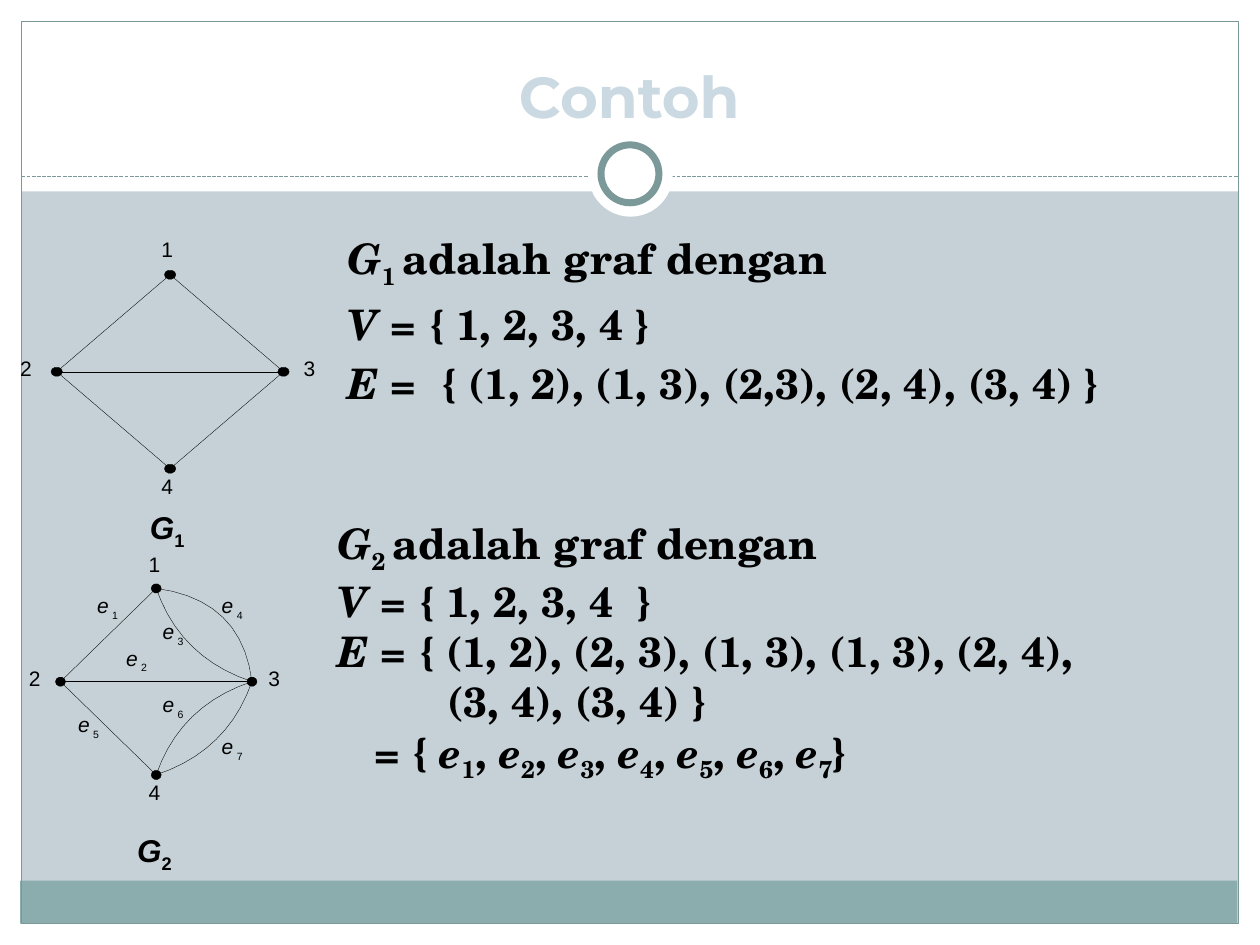
from math import cos, pi, sin
from lxml.etree import SubElement
from pptx import Presentation
from pptx.dml.color import RGBColor
from pptx.enum.dml import MSO_LINE
from pptx.enum.shapes import MSO_CONNECTOR, MSO_SHAPE
from pptx.enum.text import MSO_ANCHOR, PP_ALIGN
from pptx.oxml.ns import qn
from pptx.util import Inches, Pt

presentation = Presentation()
presentation.slide_width, presentation.slide_height = Inches(10), Inches(7.5)
column = presentation.slide_width / 100
row = presentation.slide_height / 75
color = RGBColor.from_string
slide = presentation.slides.add_slide(presentation.slide_layouts[6])
slide.background.fill.solid()
slide.background.fill.fore_color.rgb = color("C5D1D7")


def add_line(shapes, start, end, line_color="000000", width=0.2, dash=None):
    connector = shapes.add_connector(
        MSO_CONNECTOR.STRAIGHT, int(start[0] * column), int(start[1] * row),
        int(end[0] * column), int(end[1] * row))
    connector.line.color.rgb = color(line_color)
    connector.line.width = Pt(width)
    if dash:
        connector.line.dash_style = dash
    SubElement(connector._element.spPr, qn("a:effectLst"))


# In lines, *...* is italic and ~...~ is subscript.
def add_text(shapes, box, lines, size=12, font="Arial", text_color="000000", bold=False,
             inset=True, wrap=True, anchor=MSO_ANCHOR.TOP, align=PP_ALIGN.LEFT,
             space_before=0, indents={}):
    left, top, width, height = box
    frame = shapes.add_textbox(int(left * column), int(top * row),
                               int(width * column), int(height * row)).text_frame
    frame.word_wrap = wrap
    frame.vertical_anchor = anchor
    if not inset:
        frame.margin_left = frame.margin_right = frame.margin_top = frame.margin_bottom = 0
    for index, line in enumerate(lines):
        paragraph = frame.add_paragraph() if index else frame.paragraphs[0]
        paragraph.alignment = align
        paragraph.space_before = Pt(space_before)
        if index in indents:
            paragraph._p.get_or_add_pPr().set("marL", str(int(indents[index] * column)))
        for part_index, part in enumerate(line.split("*")):
            for piece_index, piece in enumerate(part.split("~")):
                if not piece:
                    continue
                run = paragraph.add_run()
                run.text = piece
                run.font.size, run.font.name = Pt(size), font
                run.font.bold, run.font.italic = bold, part_index % 2 == 1
                run.font.color.rgb = color(text_color)
                if piece_index % 2:
                    run.font._element.set("baseline", "-25000")


frame_parts = [
    (MSO_SHAPE.RECTANGLE, (0, 73.3, 100, 1.7), "FFFFFF", 0),
    (MSO_SHAPE.RECTANGLE, (0, 0, 100, 15.2), "FFFFFF", 0),
    (MSO_SHAPE.RECTANGLE, (0, 0, 1.7, 75), "FFFFFF", 0),
    (MSO_SHAPE.RECTANGLE, (98.3, 0, 1.7, 75), "FFFFFF", 0),
    (MSO_SHAPE.RECTANGLE, (1.6, 69.9, 96.6, 3.4), "8CADAE", 0),
    (MSO_SHAPE.RECTANGLE, (1.7, 1.7, 96.6, 71.6), None, 0.75),
    ("divider", None, None, 0),
    (MSO_SHAPE.OVAL, (46.7, 10.5, 6.7, 6.7), "FFFFFF", 0),
    (MSO_SHAPE.OVAL, (47.7, 11.5, 4.6, 4.6), "FFFFFF", 4),
]
for kind, box, fill, line_width in frame_parts:
    if kind == "divider":
        add_line(slide.shapes, (1.7, 14), (98.3, 14), "7C999A", 0.75, MSO_LINE.SQUARE_DOT)
        continue
    left, top, width, height = box
    shape = slide.shapes.add_shape(kind, int(left * column), int(top * row),
                                   int(width * column), int(height * row))
    shape.shadow.inherit = False
    if fill:
        shape.fill.solid()
        shape.fill.fore_color.rgb = color(fill)
    else:
        shape.fill.background()
    if line_width:
        shape.line.color.rgb = color("7C999A")
        shape.line.width = Pt(line_width)
    else:
        shape.line.fill.background()

add_text(slide.shapes, (3.3, 2.5, 93.3, 8.3), ["Contoh"], size=33, font="Montserrat",
         text_color="CBDAE2", bold=True, anchor=MSO_ANCHOR.BOTTOM, align=PP_ALIGN.CENTER)
add_text(slide.shapes, (26.6, 18, 71.1, 22.7),
         ["*G*~1 ~adalah graf dengan", "*V* = { 1, 2, 3, 4 }",
          "*E* =  { (1, 2), (1, 3), (2,3), (2, 4), (3, 4) }"],
         size=24, font="TeX Gyre Schola", bold=True, space_before=4.8)
edge_names = ", ".join(f"*e*~{number}~" for number in range(1, 8))
add_text(slide.shapes, (25.8, 40.6, 69.5, 31.2),
         ["*G*~2 ~adalah graf dengan", "*V* = { 1, 2, 3, 4  }",
          "*E* = { (1, 2), (2, 3), (1, 3), (1, 3), (2, 4),", "(3, 4), (3, 4) }",
          "= { " + edge_names + "}"],
         size=24, font="TeX Gyre Schola", bold=True, indents={3: 8.7, 4: 2.9})

graphs = [
    {"nodes": [(13.5, 21.8), (4.5, 29.5), (22.5, 29.5), (13.5, 37.2)],
     "radius": 0.45,
     "edges": [(1, 2), (2, 4), (1, 3), (3, 4), (2, 3)],
     "curves": [],
     "node_labels": [(12.8, 18.8), (1.6, 28.2), (24.1, 28.2), (12.8, 37.6)],
     "edge_labels": [],
     "name": ("*G*~1~", 10.9, 39.8)},
    {"nodes": [(12.4, 46.7), (4.8, 54.1), (20, 54.1), (12.4, 61.5)],
     "radius": 0.4,
     "edges": [(2, 4), (1, 2), (2, 3)],
     "curves": [(1, 3, (14.3, 52.2)), (3, 4, (14.3, 56)),
                (1, 3, (19.2, 47.6)), (3, 4, (18.1, 59.6))],
     "node_labels": [(11.8, 43.8), (2.3, 52.8), (21.3, 52.8), (11.8, 61.9)],
     "edge_labels": [(7.7, 47), (10, 51.2), (12.9, 49.1), (17.6, 47),
                     (6.2, 56.5), (12.9, 54.9), (17.6, 58.2)],
     "name": ("*G*~2~", 9.9, 65.5)},
]
for graph in graphs:
    shapes = slide.shapes.add_group_shape().shapes
    nodes = graph["nodes"]
    outlines = [([(x + graph["radius"] * cos(step * pi / 5),
                   y + 0.37 * sin(step * pi / 5)) for step in range(10)], True)
                for x, y in nodes]
    for first, last, bend in graph["curves"]:
        ends = zip(nodes[first - 1], bend, nodes[last - 1])
        xs, ys = [[(1 - t) ** 2 * a + 2 * t * (1 - t) * b + t ** 2 * c
                   for t in (step / 10 for step in range(11))] for a, b, c in ends]
        outlines.append((list(zip(xs, ys)), False))
    for points, closed in outlines:
        corners = [(int(x * column), int(y * row)) for x, y in points]
        builder = shapes.build_freeform(*corners[0])
        builder.add_line_segments(corners[1:], close=closed)
        shape = builder.convert_to_shape()
        shape.shadow.inherit = False
        if closed:
            shape.fill.solid()
            shape.fill.fore_color.rgb = color("000000")
        else:
            shape.fill.background()
        shape.line.color.rgb = color("000000")
        shape.line.width = Pt(0.2)
    for first, last in graph["edges"]:
        add_line(shapes, nodes[first - 1], nodes[last - 1])
    for number, (x, y) in enumerate(graph["node_labels"], 1):
        add_text(shapes, (x, y, 2.5, 3.1), [str(number)], inset=False)
    for number, (x, y) in enumerate(graph["edge_labels"], 1):
        add_text(shapes, (x, y, 2.1, 3.1), ["*e*"], inset=False)
        add_text(shapes, (x + 1.2, y + 1.3, 1.4, 2), [str(number)], size=6, inset=False)
    name, x, y = graph["name"]
    add_text(shapes, (x, y, 4.9, 4), [name], size=18, bold=True, wrap=False)

presentation.save("out.pptx")
